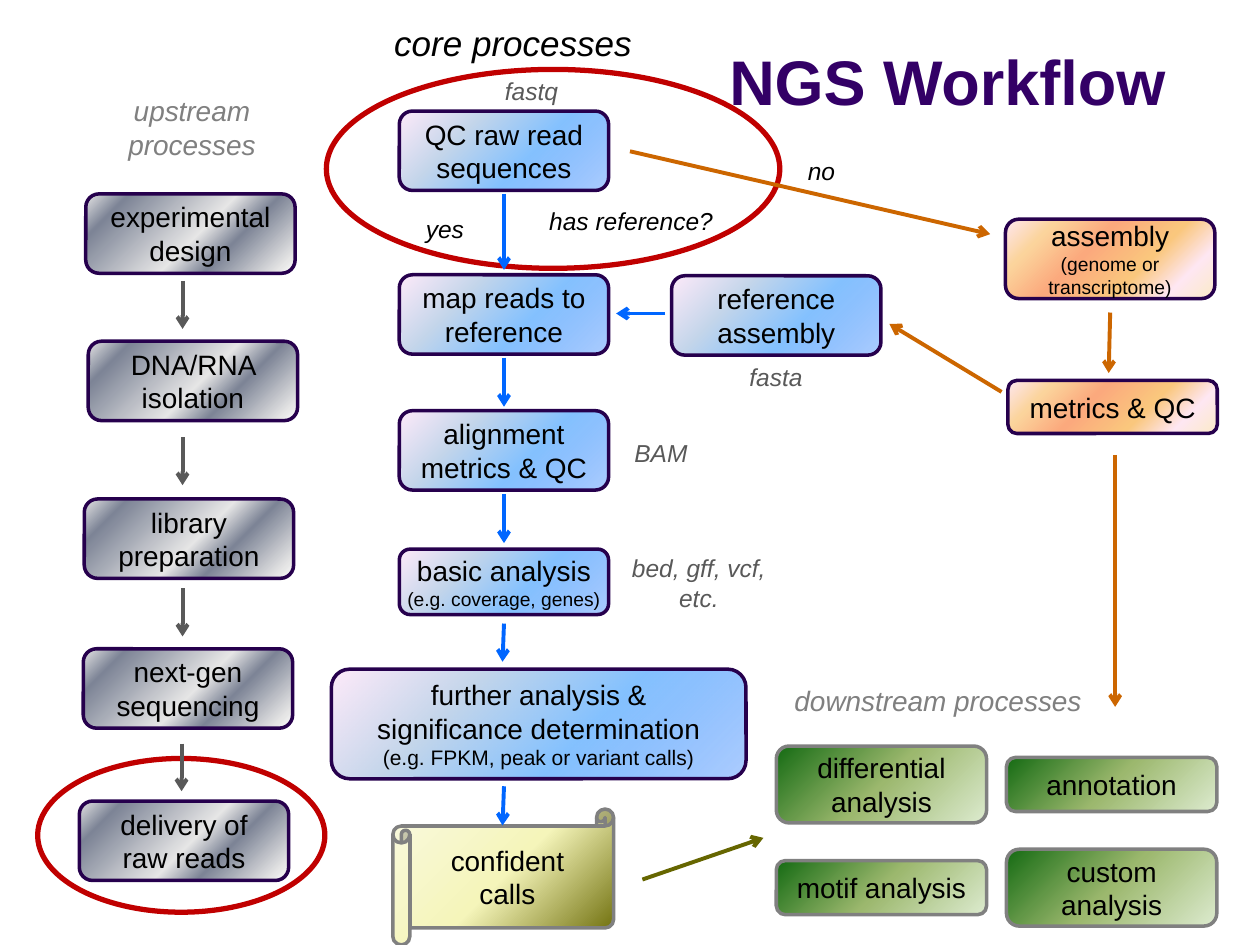
import pptx
import pptx.util
import pptx.dml.color
import pptx.enum.shapes
import pptx.enum.text
import pptx.oxml
import pptx.oxml.ns
from pptx.util import Cm

RGBColor = pptx.dml.color.RGBColor
MSO_SHAPE = pptx.enum.shapes.MSO_SHAPE
qn = pptx.oxml.ns.qn

BLACK = RGBColor(0x00, 0x00, 0x00)
DARK_GRAY = RGBColor(0x59, 0x59, 0x59)
GRAY = RGBColor(0x80, 0x80, 0x80)
INDIGO = RGBColor(0x33, 0x00, 0x66)
NAVY = RGBColor(0x26, 0x00, 0x4D)
BLUE = RGBColor(0x00, 0x66, 0xFF)
ORANGE = RGBColor(0xCC, 0x66, 0x00)
OLIVE = RGBColor(0x66, 0x66, 0x00)
RED = RGBColor(0xC0, 0x00, 0x00)

CORE = [(0, "5E9EFF"), (40, "85C2FF"), (70, "C4D6EB"), (100, "FFEBFA")]
UPSTREAM = [(0, "FFFFFF"), (7, "E6E6E6"), (32, "7D8496"),
            (47, "E6E6E6"), (85, "7D8496"), (100, "E6E6E6")]
ASSEMBLY = [(0, "FBEAC7"), (18, "FEE7F2"), (36, "FAC77D"),
            (61, "FBA97D"), (82, "FBD49C"), (100, "FEE7F2")]
DOWNSTREAM = [(0, "DDEBCF"), (50, "9CB86E"), (100, "156B13")]
SCROLL = [(0, "666600"), (50, "F5F5BA"), (100, "F9F9DE")]


def write(s, text, size=16, small=11, color=BLACK, bold=False, italic=False, inset=0.25):
    tf = s.text_frame
    tf.word_wrap = True
    tf.vertical_anchor = pptx.enum.text.MSO_ANCHOR.MIDDLE
    tf.margin_left = tf.margin_right = Cm(inset)
    tf.margin_top = tf.margin_bottom = 0
    for i, line in enumerate(text.split("\n")):
        p = tf.paragraphs[0] if i == 0 else tf.add_paragraph()
        p.alignment = pptx.enum.text.PP_ALIGN.CENTER
        r = p.add_run()
        r.text = line
        r.font.name = "Arial"
        r.font.size = pptx.util.Pt(small if line.startswith("(") else size)
        r.font.bold = bold
        r.font.italic = italic
        r.font.color.rgb = color


def shade(s, stops):
    s.fill.gradient()
    s.fill.gradient_angle = 135
    gs_list = s._element.spPr.find(qn("a:gradFill")).find(qn("a:gsLst"))
    for gs in list(gs_list):
        gs_list.remove(gs)
    for pos, rgb in stops:
        gs = pptx.oxml.parse_xml(
            f'<a:gs {pptx.oxml.ns.nsdecls("a")} pos="{pos * 1000}"><a:srgbClr val="{rgb}"/></a:gs>')
        if stops is CORE and pos == 0:
            gs[0].append(pptx.oxml.parse_xml(
                f'<a:alpha {pptx.oxml.ns.nsdecls("a")} val="50000"/>'))
        gs_list.append(gs)


prs = pptx.Presentation()
prs.slide_width, prs.slide_height = Cm(25.4), Cm(19.05)
shapes = prs.slides.add_slide(prs.slide_layouts[6]).shapes

W, H = 4.22, 1.6
boxes = [
    ("QC raw read sequences", 8.05, 2.24, W, H, CORE, {}),
    ("map reads to reference", 8.05, 5.54, W, H, CORE, {}),
    ("alignment metrics & QC", 8.05, 8.28, W, H, CORE, {}),
    ("basic analysis\n(e.g. coverage, genes)", 8.05, 11.07, W, 1.32, CORE, {"inset": 0}),
    ("further analysis & significance determination\n(e.g. FPKM, peak or variant calls)",
     6.68, 13.49, 8.36, 2.21, CORE, {"small": 12, "inset": 0.5}),
    ("reference assembly", 13.54, 5.56, W, H, CORE, {}),
    ("experimental design", 1.73, 3.91, W, H, UPSTREAM, {}),
    ("DNA/RNA isolation", 1.78, 6.88, W, H, UPSTREAM, {}),
    ("library preparation", 1.7, 10.06, W, H, UPSTREAM, {}),
    ("next-gen sequencing", 1.68, 13.08, W, H, UPSTREAM, {}),
    ("delivery of raw reads", 1.6, 16.15, W, H, UPSTREAM, {}),
    ("assembly\n(genome or transcriptome)", 20.27, 4.42, W, H, ASSEMBLY, {}),
    ("metrics & QC", 20.32, 7.67, W, 1.07, ASSEMBLY, {}),
    ("annotation", 20.29, 15.27, 4.24, 1.09, DOWNSTREAM, {}),
    ("motif analysis", 15.65, 17.35, 4.24, 1.09, DOWNSTREAM, {}),
    ("custom\nanalysis", 20.29, 17.12, 4.24, 1.55, DOWNSTREAM, {}),
    ("differential analysis", 15.65, 15.04, 4.24, 1.55, DOWNSTREAM, {}),
    ("confident calls", 7.92, 16.31, 4.45, 2.74, SCROLL, {"inset": 0.5}),
]
for text, x, y, w, h, stops, fmt in boxes:
    kind = MSO_SHAPE.HORIZONTAL_SCROLL if stops is SCROLL else MSO_SHAPE.ROUNDED_RECTANGLE
    s = shapes.add_shape(kind, Cm(x), Cm(y), Cm(w), Cm(h))
    s.shadow.inherit = False
    shade(s, stops)
    s.line.color.rgb = GRAY if stops in (DOWNSTREAM, SCROLL) else NAVY
    s.line.width = pptx.util.Pt(2)
    write(s, text, **fmt)

file_format = {"size": 14, "color": DARK_GRAY, "italic": True}
stage = {"color": GRAY, "italic": True}
decision = {"size": 14, "italic": True}
labels = [
    ("fastq", 9.14, 1.4, 3.15, 0.86, file_format),
    ("BAM", 11.84, 8.69, 2.97, 0.86, file_format),
    ("bed, gff, vcf, etc.", 12.17, 11.02, 3.84, 1.45, file_format),
    ("fasta", 14.07, 7.16, 3.15, 0.86, file_format),
    ("upstream processes", 1.47, 1.75, 4.8, 1.63, stage),
    ("downstream processes", 15.57, 13.64, 6.68, 0.94, stage),
    ("has reference?", 10.49, 4.01, 4.47, 0.86, decision),
    ("no", 15.57, 3.02, 1.98, 0.86, decision),
    ("yes", 7.98, 4.19, 1.98, 0.86, decision),
    ("core processes", 7.54, 0.3, 5.61, 1.12, {"size": 20, "italic": True}),
    ("NGS Workflow", 12.8, 0.58, 12.6, 2.08, {"size": 36, "color": INDIGO, "bold": True}),
]
for text, x, y, w, h, fmt in labels:
    write(shapes.add_textbox(Cm(x), Cm(y), Cm(w), Cm(h)), text, **fmt)

for x, y, w, h in [(6.58, 1.4, 9.14, 4.01), (0.76, 15.29, 5.79, 3.1)]:
    s = shapes.add_shape(MSO_SHAPE.OVAL, Cm(x), Cm(y), Cm(w), Cm(h))
    s.shadow.inherit = False
    s.fill.background()
    s.line.color.rgb = RED
    s.line.width = pptx.util.Pt(3)

arrows = {
    BLUE: [(10.16, 3.91, 10.16, 5.44), (10.16, 7.21, 10.16, 8.2), (10.16, 9.96, 10.16, 10.95),
           (10.16, 12.57, 10.13, 13.34), (10.16, 15.85, 10.13, 16.64), (13.41, 6.32, 12.42, 6.32)],
    DARK_GRAY: [(3.68, 5.66, 3.68, 6.63), (3.68, 8.81, 3.68, 9.78),
                (3.68, 11.86, 3.68, 12.83), (3.66, 14.99, 3.66, 15.95)],
    ORANGE: [(12.7, 3.05, 19.96, 4.72), (22.38, 6.3, 22.35, 7.52),
             (20.19, 7.9, 17.93, 6.53), (22.48, 9.17, 22.48, 14.25)],
    OLIVE: [(12.95, 17.73, 15.39, 16.89)],
}
for color, routes in arrows.items():
    for route in routes:
        s = shapes.add_connector(pptx.enum.shapes.MSO_CONNECTOR.STRAIGHT, *map(Cm, route))
        s.line.color.rgb = color
        s.line.width = pptx.util.Pt(2.25)
        ln = s.line._get_or_add_ln()
        ln.append(pptx.oxml.parse_xml(
            f'<a:tailEnd {pptx.oxml.ns.nsdecls("a")} type="arrow"/>'))
        s._element.spPr.append(pptx.oxml.parse_xml(
            f'<a:effectLst {pptx.oxml.ns.nsdecls("a")}/>'))

prs.save("out.pptx")
